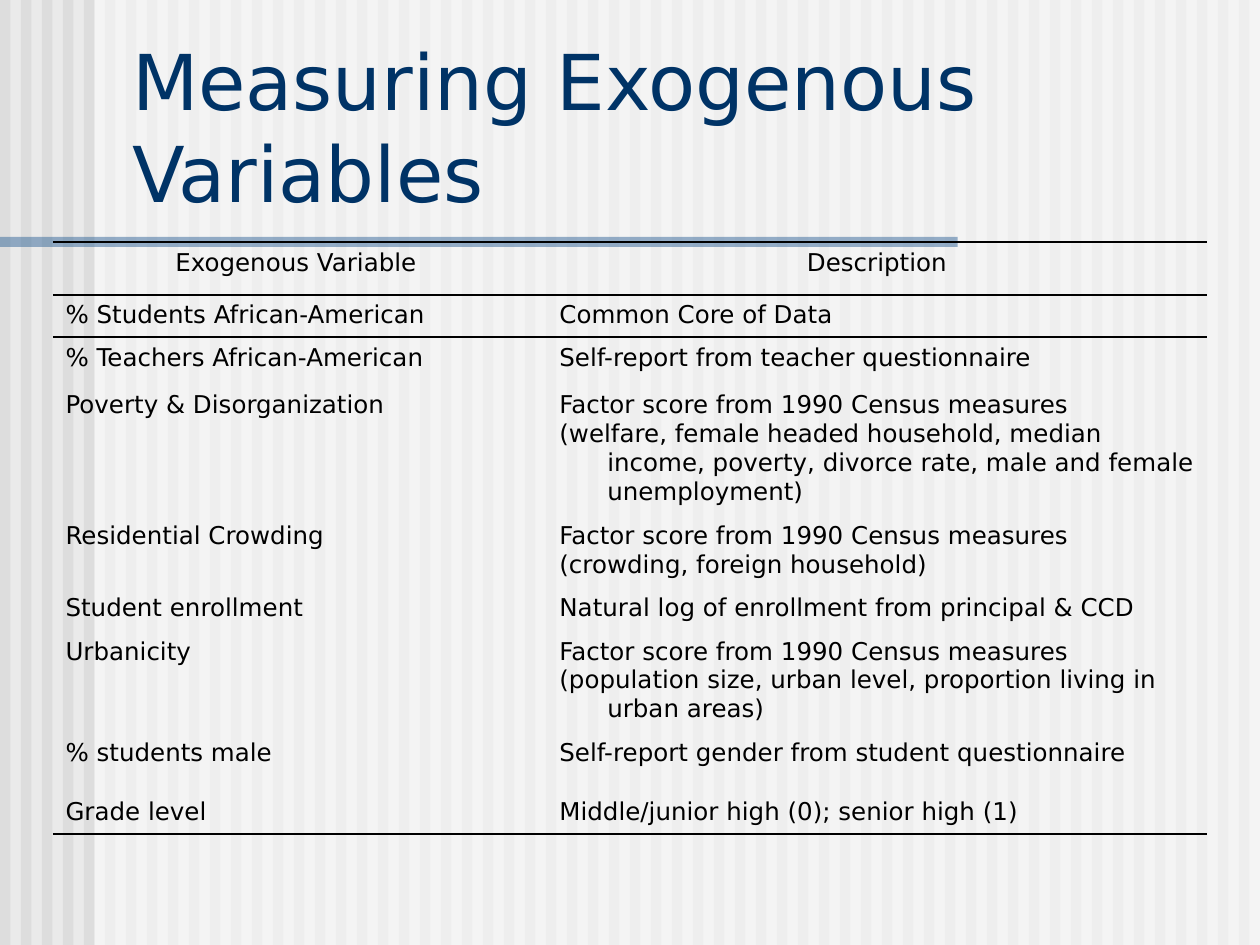
from lxml import etree
from pptx import Presentation
from pptx import util as u
from pptx.dml.color import RGBColor
from pptx.enum import shapes, text
from pptx.oxml import ns

# Content
TITLE = "Measuring Exogenous Variables"
CENSUS = "Factor score from 1990 Census measures"
HEADER = ("Exogenous Variable ", ["Description"])
# Row height, variable, description paragraphs
ROWS = [
    (0.42, *HEADER),
    (0.33, "% Students African-American", ["Common Core of Data"]),
    (0.38, "% Teachers African-American", ["Self-report from teacher questionnaire"]),
    (1.03, "Poverty & Disorganization",
     [CENSUS, "(welfare, female headed household, median income, poverty, "
              "divorce rate, male and female unemployment)"]),
    (0.57, "Residential Crowding", [CENSUS, "(crowding, foreign household)"]),
    (0.35, "Student enrollment", ["Natural log of enrollment from principal & CCD"]),
    (0.79, "Urbanicity",
     [CENSUS, "(population size, urban level, proportion living in urban areas)"]),
    (0.47, "% students male", ["Self-report gender from student questionnaire"]),
    (0.34, "Grade level", ["Middle/junior high (0); senior high (1)"]),
]
COLUMNS = (3.92, 5.24)
FONT = "DejaVu Sans"
NO_STYLE = "{2D5ABB26-0587-4C30-8999-92F81FD0307C}"
INDENT = 0.38
STRIPES, STRIPE_WIDTH = 60, 1 / 12


def color(value):
    return RGBColor.from_string(value)


def add_bar(page, left, top, width, height, fill, alpha=None):
    bar = page.shapes.add_shape(shapes.MSO_SHAPE.RECTANGLE, u.Inches(left),
                                u.Inches(top), u.Inches(width), u.Inches(height))
    bar.shadow.inherit = False
    bar.fill.solid()
    bar.fill.fore_color.rgb = color(fill)
    bar.line.fill.background()
    if alpha:
        tint = bar._element.spPr.find(".//" + ns.qn("a:srgbClr"))
        etree.SubElement(tint, ns.qn("a:alpha"), val=str(alpha * 1000))


def add_span(para, words, size, ink):
    span = para.add_run()
    span.text = words
    span.font.name = FONT
    span.font.size = u.Pt(size)
    span.font.color.rgb = color(ink)


def add_border(cell, side):
    line = etree.SubElement(cell._tc.get_or_add_tcPr(), ns.qn(f"a:ln{side}"),
                            w=str(u.Pt(1)))
    fill = etree.SubElement(line, ns.qn("a:solidFill"))
    etree.SubElement(fill, ns.qn("a:srgbClr"), val="000000")


def fill_cell(cell, paragraphs, centered, hanging):
    for index, words in enumerate(paragraphs):
        frame = cell.text_frame
        para = frame.add_paragraph() if index else frame.paragraphs[0]
        if centered:
            para.alignment = text.PP_ALIGN.CENTER
        if hanging:
            props = para._p.get_or_add_pPr()
            props.set("marL", str(u.Inches(INDENT)))
            props.set("indent", str(u.Inches(-INDENT)))
        add_span(para, words, 14, "000000")


def add_variables(page):
    heights = [row[0] for row in ROWS]
    table = page.shapes.add_table(
        len(ROWS), len(COLUMNS), u.Inches(0.42), u.Inches(1.92),
        u.Inches(sum(COLUMNS)), u.Inches(sum(heights))).table
    table.first_row = table.horz_banding = False
    table._tbl.tblPr.find(ns.qn("a:tableStyleId")).text = NO_STYLE
    for column, width in zip(table.columns, COLUMNS):
        column.width = u.Inches(width)
    last = len(ROWS) - 1
    for r, (height, variable, description) in enumerate(ROWS):
        table.rows[r].height = u.Inches(height)
        for c, paragraphs in enumerate(([variable], description)):
            cell = table.cell(r, c)
            fill_cell(cell, paragraphs, centered=r == 0, hanging=r + c > 0)
            if r in (0, 1):
                add_border(cell, "T")
            if r in (0, last):
                add_border(cell, "B")
            cell.fill.background()


def main():
    deck = Presentation()
    deck.slide_width, deck.slide_height = u.Inches(10), u.Inches(7.5)
    page = deck.slides.add_slide(deck.slide_layouts[6])
    page.background.fill.solid()
    page.background.fill.fore_color.rgb = color("EAEAEA")

    # Striped backdrop, pale veil and accent rule
    for index in range(STRIPES):
        add_bar(page, index * 2 * STRIPE_WIDTH, 0, STRIPE_WIDTH, 7.5, "DDDDDD")
    add_bar(page, 0.75, 0, 9.25, 7.5, "FFFFFF", alpha=50)
    add_bar(page, 0, 1.88, 7.6, 0.08, "336699", alpha=50)

    # Title
    box = page.shapes.add_textbox(u.Inches(0.95), u.Inches(0.21),
                                  u.Inches(8.93), u.Inches(1.57))
    box.text_frame.word_wrap = True
    box.text_frame.vertical_anchor = text.MSO_ANCHOR.BOTTOM
    add_span(box.text_frame.paragraphs[0], TITLE, 44, "003366")

    add_variables(page)
    deck.save("out.pptx")


if __name__ == "__main__":
    main()
